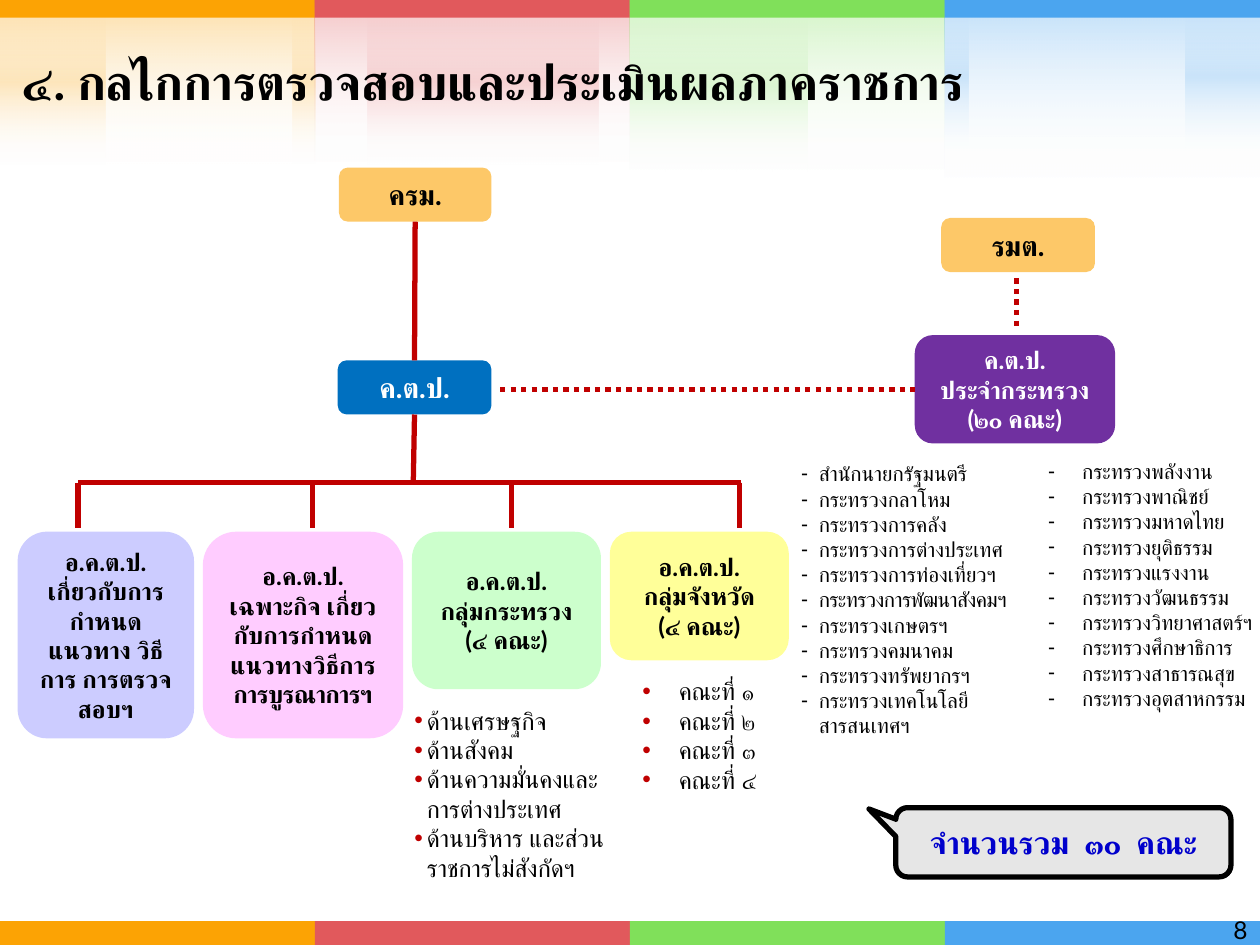
from typing import NamedTuple, Optional

from lxml.etree import SubElement
from pptx import Presentation
from pptx.dml.color import RGBColor
from pptx.enum.dml import MSO_LINE
from pptx.enum.shapes import MSO_CONNECTOR, MSO_SHAPE
from pptx.enum.text import MSO_ANCHOR, PP_ALIGN
from pptx.oxml.ns import qn
from pptx.util import Inches, Pt

ORANGE = RGBColor(0xFC, 0xA3, 0x04)
RED = RGBColor(0xE1, 0x59, 0x5C)
GREEN = RGBColor(0x80, 0xE0, 0x5A)
BLUE = RGBColor(0x4B, 0xA5, 0xEF)
BLACK = RGBColor(0, 0, 0)
WHITE = RGBColor(0xFF, 0xFF, 0xFF)
PEACH = RGBColor(0xFD, 0xC8, 0x68)
DEEP_BLUE = RGBColor(0x00, 0x70, 0xC0)
PURPLE = RGBColor(0x70, 0x30, 0xA0)
LAVENDER = RGBColor(0xCC, 0xCC, 0xFF)
PINK = RGBColor(0xFF, 0xCC, 0xFF)
MINT = RGBColor(0xCC, 0xFF, 0xCC)
YELLOW = RGBColor(0xFF, 0xFF, 0x99)
GREY = RGBColor(0xE6, 0xE6, 0xE6)
INK_BLUE = RGBColor(0, 0, 0xCC)
DARK_RED = RGBColor(0xC0, 0, 0)

FONT = "Lato"
COLS, ROWS = 100, 75
CELL = Inches(10) // COLS
CONDENSED = {"กระทรวงการพัฒนาสังคมฯ": -30, "การบูรณาการฯ": -40}


class Area(NamedTuple):
    """Left, top, width and height in grid cells."""
    x: float
    y: float
    w: float
    h: float

    def emu(self) -> list:
        return [round(v * CELL) for v in self]


class Section(NamedTuple):
    color: RGBColor
    wash_height: float
    accents: list  # (offset, width, height) of the brighter strips


class Box(NamedTuple):
    area: Area
    fill: RGBColor
    lines: list
    size: int = 14
    color: RGBColor = BLACK


class BulletList(NamedTuple):
    area: Area
    items: list
    size: int
    bullet: str
    hang: float
    bullet_color: Optional[RGBColor] = None


SECTIONS = [
    Section(ORANGE, 13.1, [(23.2, 1.8, 13.1), (0, 8.4, 13.1)]),
    Section(RED, 13.1, [(4.2, 18.3, 13.1)]),
    Section(GREEN, 13.7, [(0, 14.1, 13.7)]),
    Section(BLUE, 14.3, [(0, 1.9, 12.2), (19.1, 5.9, 12.2)]),
]

CABINET = Box(Area(26.9, 13.3, 12.1, 4.3), PEACH, ["ครม."], 16)
COMMITTEE = Box(Area(26.8, 28.6, 12.2, 4.3), DEEP_BLUE, ["ค.ต.ป."], 16, WHITE)
MINISTER = Box(Area(74.7, 17.3, 12.2, 4.3), PEACH, ["รมต."], 16)
MINISTRY = Box(Area(72.6, 26.6, 15.9, 8.6), PURPLE,
               ["ค.ต.ป.", "ประจำกระทรวง", "(๒๐ คณะ)"], 14, WHITE)
SUBCOMMITTEES = [
    Box(Area(1.4, 42.2, 14, 16.4), LAVENDER,
        ["อ.ค.ต.ป.", "เกี่ยวกับการกำหนดแนวทาง วิธีการ การตรวจสอบฯ"]),
    Box(Area(16.1, 42.2, 15.9, 16.4), PINK,
        ["อ.ค.ต.ป.", "เฉพาะกิจ เกี่ยวกับการกำหนดแนวทางวิธีการ การบูรณาการฯ"]),
    Box(Area(32.7, 42.2, 15, 12.5), MINT, ["อ.ค.ต.ป.", "กลุ่มกระทรวง", "(๔ คณะ)"]),
    Box(Area(48.4, 42.2, 14.2, 10.2), YELLOW, ["อ.ค.ต.ป.", "กลุ่มจังหวัด", "(๔ คณะ)"]),
]
TRUNK_X, RAIL_Y, DROP_END = 32.8, 38.3, 41.9
DROPS = [6.2, 24.8, 40.6, 58.7]

LISTS = [
    BulletList(Area(31.9, 55.5, 19.4, 17.5),
               ["ด้านเศรษฐกิจ", "ด้านสังคม", "ด้านความมั่นคงและ\vการต่างประเทศ",
                "ด้านบริหาร และส่วนราชการไม่สังกัดฯ"], 14, "•", 1, DARK_RED),
    BulletList(Area(50, 53.2, 13.3, 14),
               [f"คณะที่ {n}" for n in "๑๒๓๔"], 14, "•", 2.9, DARK_RED),
    BulletList(Area(82.2, 35.9, 19.8, 33.4),
               ["กระทรวงพลังงาน", "กระทรวงพาณิชย์", "กระทรวงมหาดไทย", "กระทรวงยุติธรรม",
                "กระทรวงแรงงาน", "กระทรวงวัฒนธรรม", "กระทรวงวิทยาศาสตร์ฯ",
                "กระทรวงศึกษาธิการ", "กระทรวงสาธารณสุข", "กระทรวงอุตสาหกรรม"],
               12, "-", 2.7),
    BulletList(Area(62.6, 36.1, 22, 33.4),
               ["สำนักนายกรัฐมนตรี", "กระทรวงกลาโหม", "กระทรวงการคลัง",
                "กระทรวงการต่างประเทศ", "กระทรวงการท่องเที่ยวฯ", "กระทรวงการพัฒนาสังคมฯ",
                "กระทรวงเกษตรฯ", "กระทรวงคมนาคม", "กระทรวงทรัพยากรฯ",
                "กระทรวงเทคโนโลยี\vสารสนเทศฯ"], 12, "-", 1.4),
]


def write(tf, lines: list, size: int, color=BLACK, bold=False, align=PP_ALIGN.LEFT):
    tf.word_wrap = True
    tf.text = "\n".join(lines)
    for p in tf.paragraphs:
        p.alignment = align
        head, _, tail = p.text.rpartition(" ")
        if head and tail in CONDENSED:
            p.runs[0].text = head + " "
            p.add_run().text = tail
        for r in p.runs:
            r.font.name, r.font.size, r.font.bold = FONT, Pt(size), bold
            r.font.color.rgb = color
            rPr = r.font._element
            SubElement(rPr, qn("a:cs"), typeface=FONT)
            if r.text in CONDENSED:
                rPr.set("spc", str(CONDENSED[r.text]))


def add_block(s, kind, area: Area, fill: RGBColor):
    sp = s.shapes.add_shape(kind, *area.emu())
    sp.shadow.inherit = False
    sp.fill.solid()
    sp.fill.fore_color.rgb = fill
    sp.line.fill.background()
    return sp


def add_fade(s, area: Area, stops: list):
    """Vertical gradient; each stop is (position %, colour, opacity %)."""
    sp = add_block(s, MSO_SHAPE.RECTANGLE, area, WHITE)
    sp.fill.gradient()
    sp.fill.gradient_angle = 270
    gs_list = sp.element.spPr.find(qn("a:gradFill")).find(qn("a:gsLst"))
    gs_list.clear()
    for position, color, opacity in stops:
        gs = SubElement(gs_list, qn("a:gs"), pos=str(position * 1000))
        clr = SubElement(gs, qn("a:srgbClr"), val=str(color))
        SubElement(clr, qn("a:alpha"), val=str(opacity * 1000))


def add_section(s, index: int, section: Section):
    width = COLS / len(SECTIONS)
    x = index * width
    color = section.color
    wash = Area(x, 0, width, section.wash_height), [(0, color, 20), (100, WHITE, 0)]
    add_fade(s, *wash)
    for offset, w, h in section.accents:
        add_fade(s, Area(x + offset, 0, w, h),
                 [(0, WHITE, 0), (50, color, 20), (100, WHITE, 0)])
    add_fade(s, *wash)
    for y, h in ((0, 1.4), (ROWS - 1.9, 1.9)):
        add_block(s, MSO_SHAPE.RECTANGLE, Area(x, y, width, h), color)


def add_box(s, box: Box):
    sp = add_block(s, MSO_SHAPE.FLOWCHART_ALTERNATE_PROCESS, box.area, box.fill)
    tf = sp.text_frame
    tf.margin_left = tf.margin_right = Inches(0.08)
    tf.margin_top = tf.margin_bottom = Inches(0.04)
    tf.vertical_anchor = MSO_ANCHOR.MIDDLE
    write(tf, box.lines, box.size, box.color, True, PP_ALIGN.CENTER)
    return sp


def add_line(s, x1: float, y1: float, x2: float, y2: float, dotted=False):
    ends = [round(v * CELL) for v in (x1, y1, x2, y2)]
    line = s.shapes.add_connector(MSO_CONNECTOR.STRAIGHT, *ends)
    line.line.color.rgb = DARK_RED
    line.line.width = Pt(3)
    if dotted:
        line.line.dash_style = MSO_LINE.ROUND_DOT
    SubElement(line.element.spPr, qn("a:effectLst"))
    return line


def add_list(s, lst: BulletList):
    tf = s.shapes.add_textbox(*lst.area.emu()).text_frame
    write(tf, lst.items, lst.size)
    indent = round(lst.hang * CELL)
    for p in tf.paragraphs:
        pPr = p._p.get_or_add_pPr()
        pPr.set("marL", str(indent))
        pPr.set("indent", str(-indent))
        if lst.bullet_color is not None:
            clr = SubElement(pPr, qn("a:buClr"))
            SubElement(clr, qn("a:srgbClr"), val=str(lst.bullet_color))
        SubElement(pPr, qn("a:buFont"), typeface="Arial")
        SubElement(pPr, qn("a:buChar"), char=lst.bullet)


def main():
    prs = Presentation()
    prs.slide_width, prs.slide_height = COLS * CELL, ROWS * CELL
    s = prs.slides.add_slide(prs.slide_layouts[5])
    for index, section in enumerate(SECTIONS):
        add_section(s, index, section)

    title = s.shapes.title
    title.element.getparent().append(title.element)  # bring in front of the washes
    title.left, title.top, title.width, title.height = Area(0.8, 3.1, 97.7, 6.7).emu()
    title.text_frame.vertical_anchor = MSO_ANCHOR.MIDDLE
    write(title.text_frame, ["๔. กลไกการตรวจสอบและประเมินผลภาคราชการ"], 28, bold=True)
    number = s.shapes.add_textbox(*Area(79.2, 72.1, 20.8, 2.9).emu())
    write(number.text_frame, ["8"], 14, align=PP_ALIGN.RIGHT)

    cabinet, committee, _, ministry = [
        add_box(s, box) for box in (CABINET, COMMITTEE, MINISTER, MINISTRY)]
    link = add_line(s, TRUNK_X, 17.6, TRUNK_X, 28.6)
    link.begin_connect(cabinet, 2)
    link.end_connect(committee, 0)
    add_line(s, 39.7, 30.9, 72.6, 30.9, dotted=True).end_connect(ministry, 1)
    add_line(s, 80.7, 22.1, 80.7, 26.2, dotted=True)
    add_line(s, TRUNK_X, 32.9, TRUNK_X, RAIL_Y).begin_connect(committee, 2)
    add_line(s, DROPS[0], RAIL_Y, DROPS[-1] + 0.1, RAIL_Y)
    for x in DROPS:
        add_line(s, x, RAIL_Y, x, DROP_END)
    for box in SUBCOMMITTEES:
        add_box(s, box)
    for lst in LISTS:
        add_list(s, lst)

    total = add_block(s, MSO_SHAPE.ROUNDED_RECTANGULAR_CALLOUT,
                      Area(71.1, 64.1, 26.6, 5.5), GREY)
    for i, value in enumerate((-0.58, -0.48, 0.17)):
        total.adjustments[i] = value
    total.line.color.rgb = BLACK
    total.line.width = Pt(3)
    total.text_frame.vertical_anchor = MSO_ANCHOR.MIDDLE
    write(total.text_frame, ["จำนวนรวม  ๓๐  คณะ"], 18, INK_BLUE, True, PP_ALIGN.CENTER)
    prs.save("out.pptx")


if __name__ == "__main__":
    main()
